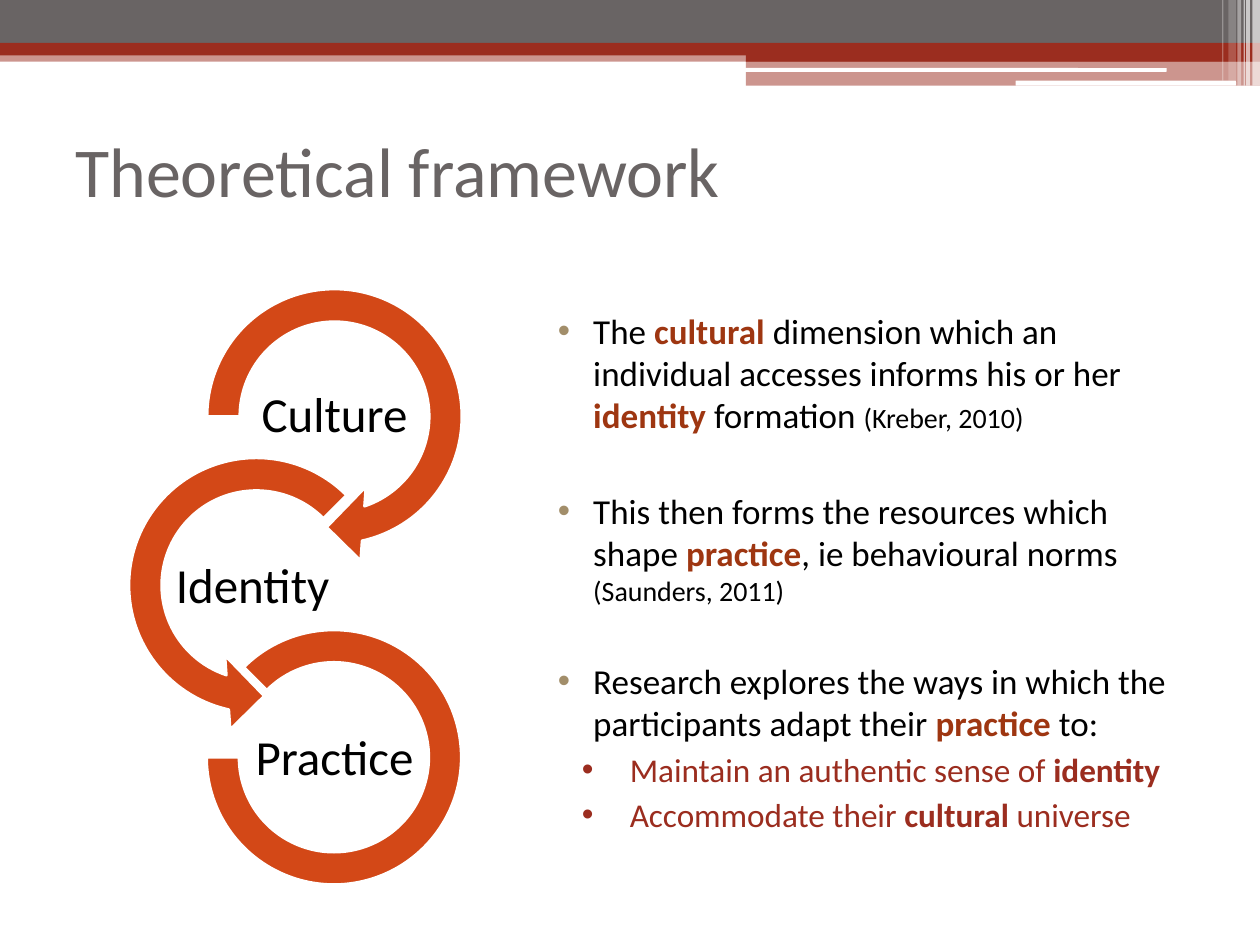
"""Build the Theoretical framework slide: three linked rings and their reading."""
from lxml import etree
from pptx import Presentation
from pptx.dml.color import RGBColor
from pptx.enum.shapes import MSO_SHAPE
from pptx.enum.text import MSO_ANCHOR, PP_ALIGN
from pptx.oxml.ns import qn
from pptx.util import Inches, Pt

RECT, ROUND = MSO_SHAPE.RECTANGLE, MSO_SHAPE.ROUNDED_RECTANGLE
RIGHT, LEFT = MSO_SHAPE.CIRCULAR_ARROW, MSO_SHAPE.LEFT_CIRCULAR_ARROW
ARC = MSO_SHAPE.BLOCK_ARC
MIDDLE, CENTER = MSO_ANCHOR.MIDDLE, PP_ALIGN.CENTER
HUES = {"gray": "696464", "red": "9B2D1F", "white": "FFFFFF", "ring": "D34817",
        "black": "000000", "rust": "9E3611", "tan": "A28E6A"}

deck = Presentation()
deck.slide_width, deck.slide_height = Inches(10), Inches(7.5)
col, row = deck.slide_width / 10, deck.slide_height / 7.5
slide = deck.slides.add_slide(deck.slide_layouts[6])


def draw(kind, box, hue, alpha=100):
    x, y, w, h = box
    item = slide.shapes.add_shape(kind, int(x * col), int(y * row), int(w * col), int(h * row))
    item.shadow.inherit = False
    item.fill.solid()
    item.fill.fore_color.rgb = RGBColor.from_string(HUES[hue])
    item.line.fill.background()
    if alpha < 100:
        tone = item.fill._xPr.find(".//" + qn("a:srgbClr"))
        etree.SubElement(tone, qn("a:alpha")).set("val", str(alpha * 1000))
    return item


def write(box, lines):
    x, y, w, h = box
    item = slide.shapes.add_textbox(int(x * col), int(y * row), int(w * col), int(h * row))
    frame = item.text_frame
    frame.word_wrap = True
    for i, line in enumerate(lines):
        para = frame.add_paragraph() if i else frame.paragraphs[0]
        for text, size, hue, bold in line:
            run = para.add_run()
            run.text = text
            run.font.name, run.font.size, run.font.bold = "Calibri", Pt(size), bold
            run.font.color.rgb = RGBColor.from_string(HUES[hue])
    return frame


bands = [
    (RECT, (0, 0.4, 10, 0.09), "red", 50),
    (RECT, (0, 0, 10, 0.34), "gray", 100),
    (RECT, (0, 0.34, 10, 0.1), "red", 100),
    (RECT, (5.92, 0.39, 4.08, 0.1), "red", 100),
    (RECT, (5.92, 0.48, 4.08, 0.2), "red", 50),
    (ROUND, (5.91, 0.54, 3.35, 0.03), "white", 100),
    (ROUND, (8.06, 0.64, 1.75, 0.04), "white", 100),
]
for band in bands:
    draw(*band)

stripes = [(9.94, 0.06, 0.68, 65), (9.89, 0.03, 0.68, 65), (9.87, 0.01, 0.68, 60),
           (9.82, 0.03, 0.68, 40), (9.75, 0.06, 0.64, 20), (9.7, 0.01, 0.64, 30)]
for x, wide, high, alpha in stripes:
    draw(RECT, (x, 0, wide, high), "white", alpha)

title = write((0.5, 0.76, 9, 1.17), [[("Theoretical framework", 40, "gray", False)]])
title.vertical_anchor = MIDDLE

rings = [
    ("Culture", RIGHT, (1.48, 2.13, 2.35, 2.35), (0.11, 11.42, 45, 108, 0.125), (2, 2.98)),
    ("Identity", LEFT, (0.86, 3.47, 2.35, 2.35), (0.11, 11.42, 63, 189, 0.125), (1.35, 4.34)),
    ("Practice", ARC, (1.64, 5, 2.02, 2.02), (135, 108, 0.127), (2, 5.7)),
]
for name, kind, box, bends, spot in rings:
    ring = draw(kind, box, "ring")
    ring.line.color.rgb = RGBColor.from_string(HUES["white"])
    ring.line.width = Pt(1.5)
    for i, bend in enumerate(bends):
        ring.adjustments[i] = bend
    label = write((*spot, 1.31, 0.65), [[(name, 28, "black", False)]])
    label.vertical_anchor = MIDDLE
    label.margin_left = label.margin_right = int(0.02 * col)
    label.margin_top = label.margin_bottom = int(0.02 * row)
    label.paragraphs[0].alignment = CENTER
    label.paragraphs[0].line_spacing = 0.9

plain, key, cite = (20, "black", False), (20, "rust", True), (16, "black", False)
goal, mark = (19, "red", False), (19, "red", True)
main, sub = (0.4, -0.28, "tan"), (0.69, -0.38, "red")
points = [
    (main, 3, [("The ", *plain), ("cultural", *key),
               (" dimension which an individual accesses informs his or her ", *plain),
               ("identity ", *key), ("formation ", *plain), ("(Kreber, 2010)", *cite)]),
    (main, 30.4, [("This then forms the resources which shape ", *plain), ("practice", *key),
                  (", ie behavioural norms ", *plain), ("(Saunders, 2011)", *cite)]),
    (main, 30.4, [("Research explores the ways in which the participants adapt their ", *plain),
                  ("practice", *key), (" to:", *plain)]),
    (sub, 3, [("Maintain an authentic sense of ", *goal), ("identity", *mark)]),
    (sub, 3, [("Accommodate their ", *goal), ("cultural", *mark), (" universe", *goal)]),
]
body = write((4.21, 2.41, 5.29, 4.95), [line for _, _, line in points])
for para, ((left, hang, hue), gap, _) in zip(body.paragraphs, points):
    para.space_before = Pt(gap)
    para.level = int(left > 0.5)
    props = para._p.get_or_add_pPr()
    props.set("marL", str(int(left * col)))
    props.set("indent", str(int(hang * col)))
    tint = etree.SubElement(props, qn("a:buClr"))
    etree.SubElement(tint, qn("a:srgbClr")).set("val", HUES[hue])
    etree.SubElement(props, qn("a:buFont")).set("typeface", "Arial")
    etree.SubElement(props, qn("a:buChar")).set("char", "•")

deck.save("out.pptx")
